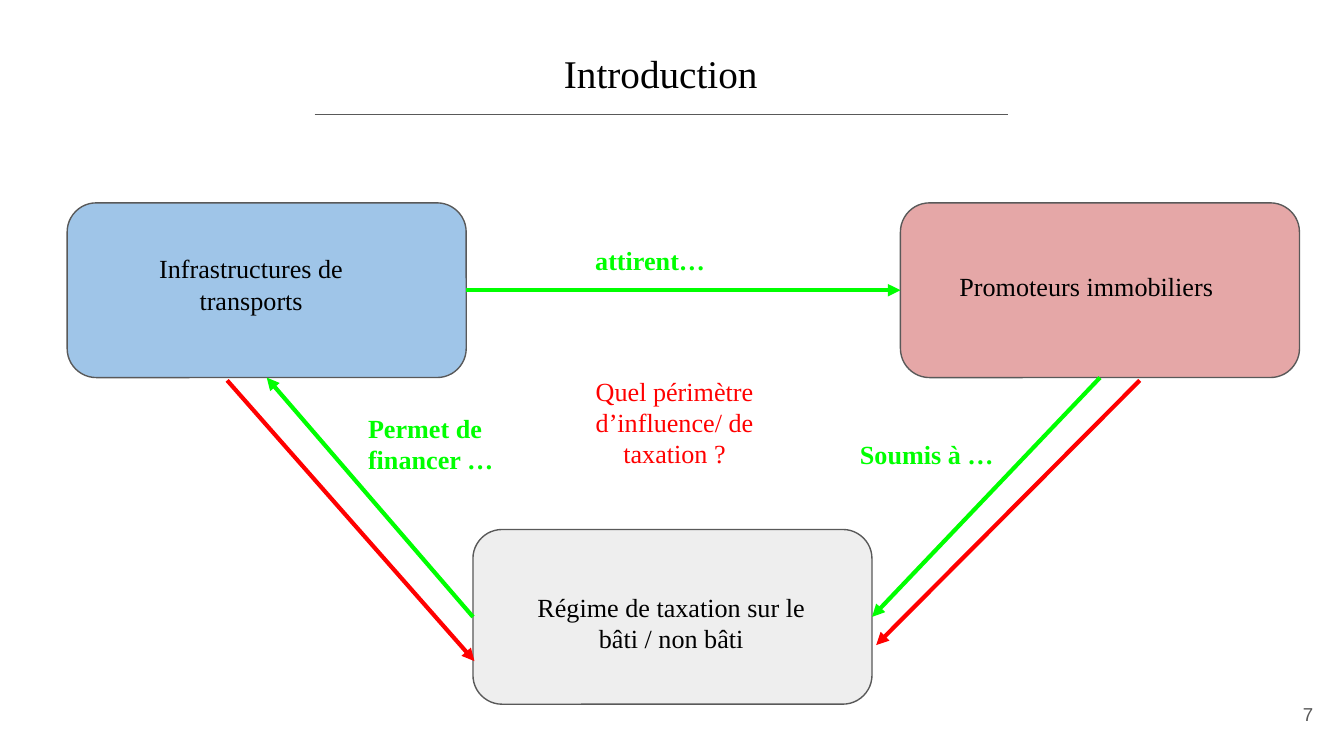
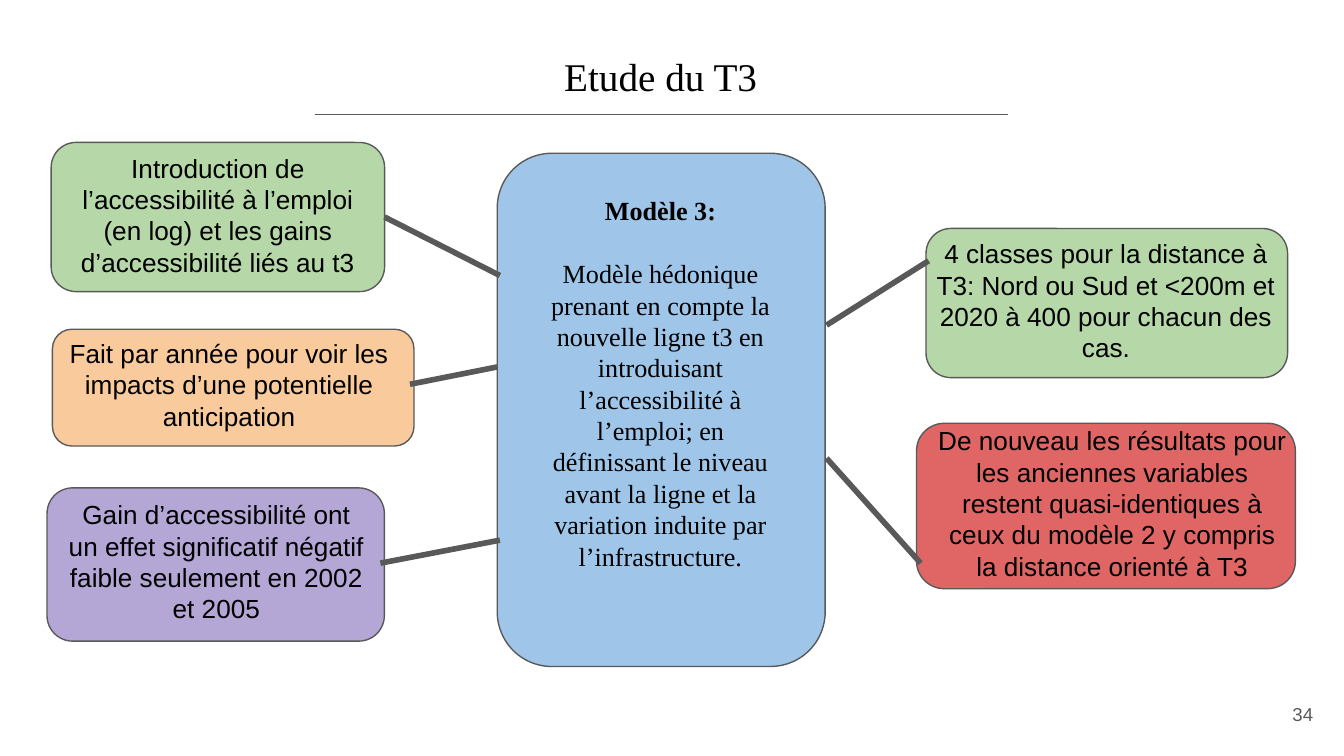
from dataclasses import dataclass

from lxml import etree
from pptx import Presentation
from pptx.dml.color import RGBColor
from pptx.enum.shapes import MSO_CONNECTOR, MSO_SHAPE
from pptx.enum.text import MSO_ANCHOR, MSO_AUTO_SIZE, PP_ALIGN
from pptx.oxml.ns import qn
from pptx.util import Pt

STRAIGHT = MSO_CONNECTOR.STRAIGHT
PROCESS = MSO_SHAPE.FLOWCHART_ALTERNATE_PROCESS
ROUNDED = MSO_SHAPE.ROUNDED_RECTANGLE
TOP, MIDDLE = MSO_ANCHOR.TOP, MSO_ANCHOR.MIDDLE
LEFT, CENTER, RIGHT = PP_ALIGN.LEFT, PP_ALIGN.CENTER, PP_ALIGN.RIGHT
FIT, NO_FIT = MSO_AUTO_SIZE.SHAPE_TO_FIT_TEXT, MSO_AUTO_SIZE.NONE
SIDE_LEFT, SIDE_BOTTOM, SIDE_RIGHT = 1, 2, 3


@dataclass(frozen=True)
class Theme:
    serif: str = "Times New Roman"
    sans: str = "Arial"
    title_size: float = 21
    body_size: float = 14
    page_size: float = 10
    inset: float = 7.2
    thin: float = 0.75
    arrow: float = 2.25
    link: float = 3
    ink: str = "000000"
    gray: str = "595959"
    blue: str = "9FC5E8"
    pink: str = "E5A7A7"
    pale: str = "EEEEEE"
    purple: str = "B4A7D6"
    coral: str = "E06666"
    orange: str = "F9CB9C"
    sage: str = "B6D7A8"
    green: str = "00FF00"
    red: str = "FF0000"


class Deck:
    def __init__(self, theme):
        self.theme = theme
        self.prs = Presentation()
        self.prs.slide_width, self.prs.slide_height = Pt(720), Pt(405)
        self.s = None

    def slide(self, title, page, title_top):
        t = self.theme
        self.s = self.prs.slides.add_slide(self.prs.slide_layouts[5])
        sp = self.s.shapes.title
        sp.left, sp.top, sp.width, sp.height = Pt(168.5), Pt(title_top), Pt(371), Pt(40.3)
        self.style_text(sp.text_frame, title, t.serif, t.title_size, t.ink, CENTER)
        self.line((168.5, 61.2), (540, 61.2), t.gray, t.thin)
        self.text((667.4, 367.2, 43.2, 31), str(page), t.sans, t.gray, RIGHT,
                  size=t.page_size, anchor=MIDDLE, fit=NO_FIT)

    def style_text(self, tf, text, font, size, color, align, bold=False, anchor=TOP, fit=FIT):
        tf.text = text
        tf.word_wrap = True
        tf.auto_size = fit
        tf.vertical_anchor = anchor
        inset = Pt(self.theme.inset)
        tf.margin_left = tf.margin_right = tf.margin_top = tf.margin_bottom = inset
        for p in tf.paragraphs:
            p.alignment = align
            for r in p.runs:
                r.font.name = font
                r.font.size = Pt(size)
                r.font.bold = bold
                r.font.color.rgb = RGBColor.from_string(color)

    def text(self, box, text, font, color, align=CENTER, size=None, **style):
        sp = self.s.shapes.add_textbox(*map(Pt, box))
        size = size or self.theme.body_size
        self.style_text(sp.text_frame, text, font, size, color, align, **style)
        return sp

    def box(self, kind, box, fill):
        sp = self.s.shapes.add_shape(kind, *map(Pt, box))
        sp.shadow.inherit = False
        sp.fill.solid()
        sp.fill.fore_color.rgb = RGBColor.from_string(fill)
        sp.line.color.rgb = RGBColor.from_string(self.theme.gray)
        sp.line.width = Pt(self.theme.thin)
        return sp

    def line(self, start, end, color, width, arrow=False, begin=None, finish=None):
        sp = self.s.shapes.add_connector(STRAIGHT, *map(Pt, (*start, *end)))
        if begin:
            sp.begin_connect(*begin)
        if finish:
            sp.end_connect(*finish)
        sp.line.color.rgb = RGBColor.from_string(color)
        sp.line.width = Pt(width)
        props = sp._element.spPr
        if arrow:
            etree.SubElement(props.find(qn("a:ln")), qn("a:tailEnd"), type="triangle")
        etree.SubElement(props, qn("a:effectLst"))

    def join(self, begin, finish, color):
        self.line((0, 0), (0, 0), color, self.theme.arrow, True, begin, finish)


def introduction(deck):
    t = deck.theme
    deck.slide("Introduction", 7, 19.4)
    transport, developers, taxation = (
        deck.box(PROCESS, (x, y, 213.8, 93.6), fill)
        for x, y, fill in ((36, 108.7, t.blue), (482.4, 108.7, t.pink), (253.4, 283.7, t.pale))
    )
    for box, text, align in (
        ((66.2, 128.2, 136.8, 48.2), "Infrastructures de transports", CENTER),
        ((506.9, 137.5, 158.4, 31.7), "Promoteurs immobiliers", LEFT),
        ((265.7, 309.6, 187.9, 48.2), "Régime de taxation sur le bâti / non bâti", CENTER),
    ):
        deck.text(box, text, t.serif, t.ink, align)
    deck.join((transport, SIDE_RIGHT), (developers, SIDE_LEFT), t.green)
    deck.join((taxation, SIDE_LEFT), (transport, SIDE_BOTTOM), t.green)
    deck.join((developers, SIDE_BOTTOM), (taxation, SIDE_RIGHT), t.green)
    for box, text in (
        ((311.8, 123.8, 96.5, 31.7), "attirent…"),
        ((453.6, 227.5, 110.2, 31.7), "Soumis à …"),
        ((190.1, 213.8, 110.2, 48.2), "Permet de financer …"),
    ):
        deck.text(box, text, t.serif, t.green, LEFT, bold=True)
    deck.line((121.7, 203.8), (254.2, 354.2), t.red, t.arrow, True)
    deck.line((610.6, 203.8), (469.4, 345.6), t.red, t.arrow, True)
    deck.text((290.9, 193.7, 141.1, 65.5), "Quel périmètre d’influence/ de taxation ?", t.serif, t.red)


def tram_study(deck):
    t = deck.theme
    deck.slide("Etude du T3", 34, 20.9)
    notes = (
        ((25.2, 261.4, 180.7, 82.1), t.purple, (28.1, 259.9, 175.7, 82.1),
         "Gain d’accessibilité ont un effet significatif négatif faible seulement en 2002 et 2005",
         (203.8, 301.7), (267.8, 289.4), None),
        ((491, 226.8, 203, 88.6), t.coral, (495.4, 220.3, 200.9, 99.4),
         "De nouveau les résultats pour les anciennes variables restent quasi-identiques à "
         "ceux du modèle 2 y compris la distance orienté à T3",
         (493.2, 301.7), (442.8, 245.5), None),
        ((28.1, 176.4, 193.7, 62.6), t.orange, (25.9, 173.5, 193.7, 65.5),
         "Fait par année pour voir les impacts d’une potentielle anticipation",
         (219.6, 205.9), (266.4, 196.6), None),
        ((27.4, 76.3, 178.6, 79.9), t.sage, (27.4, 74.2, 178.6, 82.1),
         "Introduction de l’accessibilité à l’emploi (en log) et les gains d’accessibilité liés au t3",
         (206, 116.2), (267.8, 147.6), SIDE_RIGHT),
        ((496.1, 122.4, 193.7, 79.9), t.sage, (491, 120.2, 203, 82.1),
         "4 classes pour la distance à T3: Nord ou Sud et <200m et 2020 à 400 pour chacun des cas.",
         (497.5, 139.7), (442.8, 174.2), None),
    )
    deck.box(ROUNDED, (266.4, 82.1, 175.7, 275), t.blue)
    model = deck.text(
        (283, 97.2, 141.8, 218.2),
        "Modèle 3:\nModèle hédonique prenant en compte la nouvelle ligne t3 en introduisant "
        "l’accessibilité à l’emploi; en définissant le niveau avant la ligne et la variation "
        "induite par l’infrastructure.",
        t.serif, t.ink)
    heading = model.text_frame.paragraphs[0]
    heading.space_after = Pt(16.8)
    heading.runs[0].font.bold = True
    for box, fill, text_box, text, start, end, side in notes:
        sp = deck.box(ROUNDED, box, fill)
        deck.text(text_box, text, t.sans, t.ink)
        deck.line(start, end, t.gray, t.link, begin=(sp, side) if side else None)


def main():
    deck = Deck(Theme())
    introduction(deck)
    tram_study(deck)
    deck.prs.save("out.pptx")


if __name__ == "__main__":
    main()
